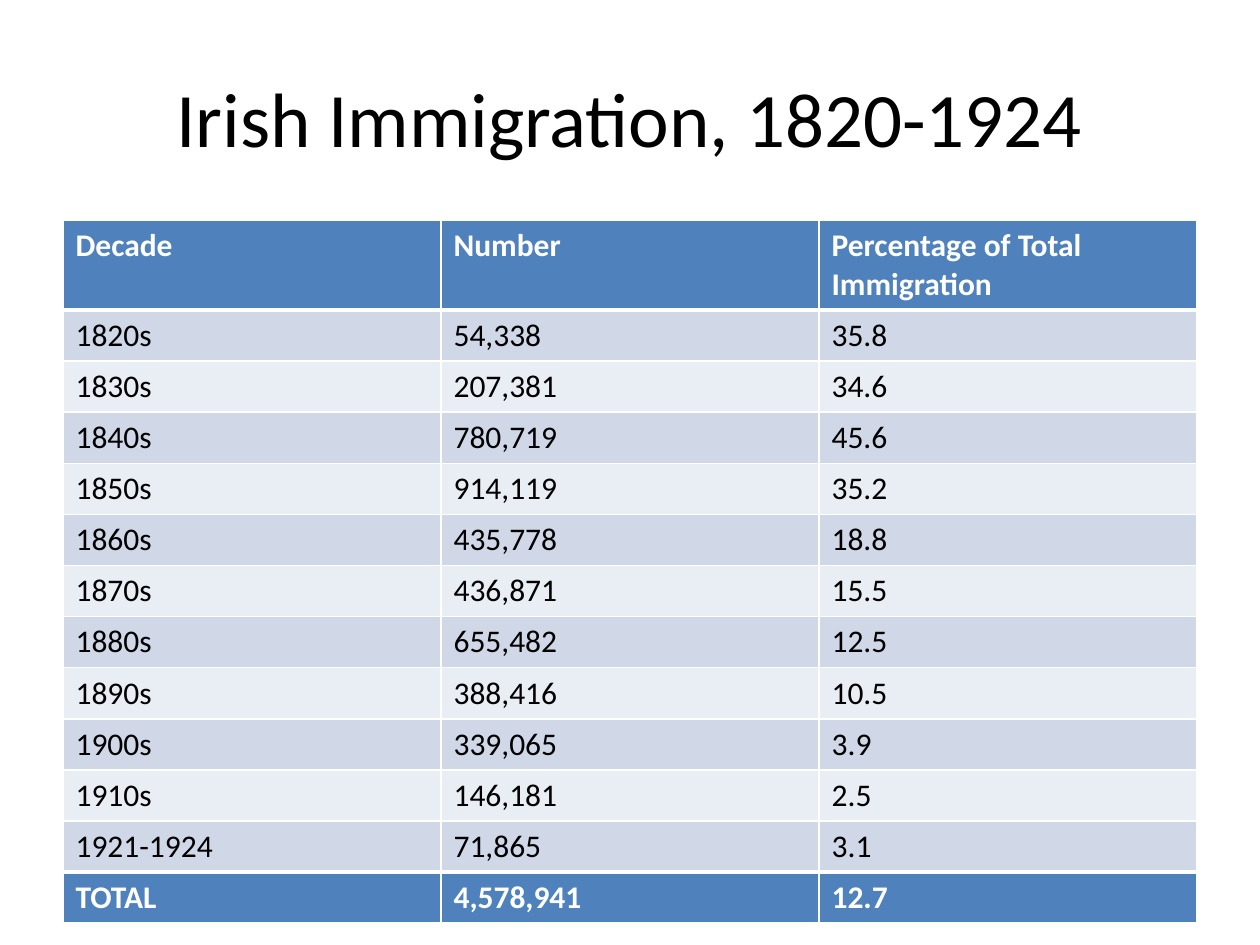
from lxml import etree
from pptx import Presentation
from pptx.dml.color import RGBColor
from pptx.enum.text import MSO_ANCHOR, PP_ALIGN
from pptx.oxml.ns import qn
from pptx.util import Inches, Pt

MIDDLE = MSO_ANCHOR.MIDDLE
CENTER = PP_ALIGN.CENTER

FONT = "Calibri"
BLACK = RGBColor(0x00, 0x00, 0x00)
WHITE = RGBColor(0xFF, 0xFF, 0xFF)
BLUE = RGBColor(0x4F, 0x81, 0xBD)
BAND_DARK = RGBColor(0xD0, 0xD8, 0xE8)
BAND_LIGHT = RGBColor(0xE9, 0xED, 0xF4)

THIN, THICK = 1, 3

ROWS = [
    ("Decade", "Number", "Percentage of Total Immigration"),
    ("1820s", "54,338", "35.8"),
    ("1830s", "207,381", "34.6"),
    ("1840s", "780,719", "45.6"),
    ("1850s", "914,119", "35.2"),
    ("1860s", "435,778", "18.8"),
    ("1870s", "436,871", "15.5"),
    ("1880s", "655,482", "12.5"),
    ("1890s", "388,416", "10.5"),
    ("1900s", "339,065", "3.9"),
    ("1910s", "146,181", "2.5"),
    ("1921-1924", "71,865", "3.1"),
    ("TOTAL", "4,578,941", "12.7"),
]


def set_font(p, size, color, bold=False):
    p.font.name = FONT
    p.font.size = Pt(size)
    p.font.bold = bold
    p.font.color.rgb = color


def set_borders(cell, top, bottom):
    tc_pr = cell._tc.get_or_add_tcPr()
    for side, width in (("L", THIN), ("R", THIN), ("T", top), ("B", bottom)):
        line = etree.SubElement(tc_pr, qn(f"a:ln{side}"), w=str(Pt(width)))
        fill = etree.SubElement(line, qn("a:solidFill"))
        etree.SubElement(fill, qn("a:srgbClr"), val=str(WHITE))


def add_title(s, text, left, top, width, height):
    title = s.shapes.title
    title.left, title.top, title.width, title.height = left, top, width, height
    tf = title.text_frame
    tf.text = text
    tf.vertical_anchor = MIDDLE
    p = tf.paragraphs[0]
    p.alignment = CENTER
    set_font(p, 44, BLACK)


def add_immigration_table(s, rows, left, top, width, height):
    table = s.shapes.add_table(len(rows), len(rows[0]), left, top, width, height).table
    table.last_row = True
    last = len(rows) - 1
    for i, values in enumerate(rows):
        strong = i in (0, last)
        band = BAND_DARK if i % 2 else BAND_LIGHT
        for j, value in enumerate(values):
            cell = table.cell(i, j)
            cell.text = value
            set_font(cell.text_frame.paragraphs[0], 18, WHITE if strong else BLACK, strong)
            set_borders(
                cell,
                THICK if i in (1, last) else THIN,
                THICK if i in (0, last - 1) else THIN,
            )
            cell.fill.solid()
            cell.fill.fore_color.rgb = BLUE if strong else band


def main():
    prs = Presentation()
    prs.slide_width, prs.slide_height = Inches(10), Inches(7.5)
    s = prs.slides.add_slide(prs.slide_layouts[5])
    add_title(s, "Irish Immigration, 1820-1924",
              Inches(0.5), Inches(0.3), Inches(9), Inches(1.25))
    add_immigration_table(s, ROWS, Inches(0.5), Inches(1.75), Inches(9), Inches(5.27))
    prs.save("out.pptx")


if __name__ == "__main__":
    main()
